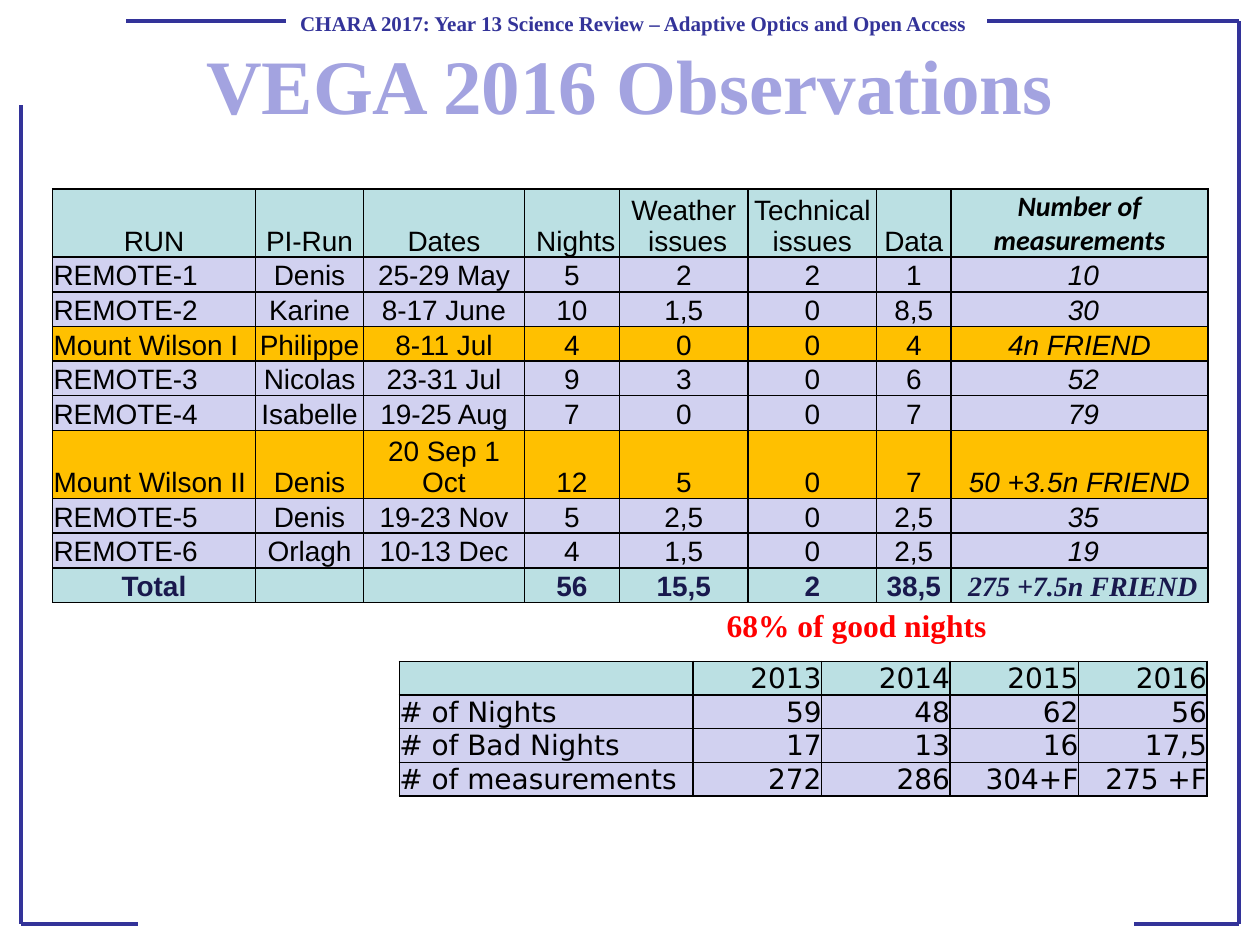
"""Build the VEGA 2016 observations slide with its run table and yearly summary."""
import pptx
import pptx.enum.shapes
import pptx.enum.text
import pptx.oxml.ns
import pptx.util
from lxml import etree
from pptx.dml.color import RGBColor

Cm, Pt = pptx.util.Cm, pptx.util.Pt
qn = pptx.oxml.ns.qn
ALIGN = pptx.enum.text.PP_ALIGN
ANCHOR = pptx.enum.text.MSO_ANCHOR

COLORS = {
    "frame": "333399", "title": "A3A3E0", "alert": "FF0000", "black": "000000",
    "total": "19194D", "head": "BBE0E3", "body": "D1D1F0", "onsite": "FFC000",
}
SERIF, SANS = "Times New Roman", "Arial"

HEADER = "CHARA 2017: Year 13 Science Review – Adaptive Optics and Open Access"
TITLE = "VEGA 2016 Observations"
NOTE = "68% of good nights"

RUNS = [
    ["RUN", "PI-Run", "Dates", " Nights", "Weather\n issues", "Technical issues", "Data",
     "Number of\nmeasurements"],
    ["REMOTE-1", "Denis", "25-29 May", "5", "2", "2", "1", " 10"],
    ["REMOTE-2", "Karine", "8-17 June", "10", "1,5", "0", "8,5", " 30"],
    ["Mount Wilson I", "Philippe", "8-11 Jul", "4", "0", "0", "4", "4n FRIEND"],
    ["REMOTE-3", "Nicolas", "23-31 Jul", "9", "3", "0", "6", " 52"],
    ["REMOTE-4", "Isabelle", "19-25 Aug", "7", "0", "0", "7", " 79"],
    ["Mount Wilson II", "Denis", "20 Sep 1 Oct", "12", "5", "0", "7", "50 +3.5n FRIEND"],
    ["REMOTE-5", "Denis", "19-23 Nov", "5", "2,5", "0", "2,5", " 35"],
    ["REMOTE-6", "Orlagh", "10-13 Dec", "4", "1,5", "0", "2,5", " 19"],
    ["Total", "", "", "56", "15,5", "2", "38,5", " 275 +7.5n FRIEND"],
]
RUN_COLS = [4.09, 2.18, 3.24, 1.92, 2.59, 2.59, 1.5, 5.18]

YEARS = [
    ["", "2013", "2014", "2015", "2016"],
    ["# of Nights", "59", "48", "62", "56"],
    ["# of Bad Nights", "17", "13", "16", "17,5"],
    ["# of measurements", "272", "286", "304+F", "275 +F"],
]
YEAR_COLS = [5.92] + [2.59] * 4

LEFT, RIGHT, TOP, BOTTOM = 0.43, 24.98, 0.43, 18.63
FRAME = [
    (LEFT, 2.12, LEFT, BOTTOM), (LEFT, BOTTOM, 2.79, BOTTOM),
    (2.54, TOP, 5.76, TOP), (19.9, TOP, RIGHT, TOP),
    (RIGHT, TOP, RIGHT, BOTTOM), (22.86, BOTTOM, RIGHT, BOTTOM),
]


def write(tf, text, size=16, font=SANS, color="black", bold=False, italic=False, align=ALIGN.LEFT):
    for i, line in enumerate(text.split("\n")):
        p = tf.add_paragraph() if i else tf.paragraphs[0]
        p.alignment = align
        if not line:
            etree.SubElement(p._p, qn("a:endParaRPr"), sz=str(size * 100))
            continue
        r = p.add_run()
        r.text = line
        r.font.size, r.font.name = Pt(size), font
        r.font.bold, r.font.italic = bold, italic
        r.font.color.rgb = RGBColor.from_string(COLORS[color])


def add_label(s, text, x, y, w, h, **fmt):
    tf = s.shapes.add_textbox(Cm(x), Cm(y), Cm(w), Cm(h)).text_frame
    tf.word_wrap = False
    tf.auto_size = pptx.enum.text.MSO_AUTO_SIZE.SHAPE_TO_FIT_TEXT
    write(tf, text, **fmt)


def add_line(s, x1, y1, x2, y2):
    line = s.shapes.add_connector(pptx.enum.shapes.MSO_CONNECTOR.STRAIGHT, Cm(x1), Cm(y1), Cm(x2), Cm(y2))
    line.line.width = Pt(2.25)
    line.line.color.rgb = RGBColor.from_string(COLORS["frame"])
    etree.SubElement(line._element.spPr, qn("a:effectLst"))


def add_borders(cell):
    tc_pr = cell._tc.get_or_add_tcPr()
    for side in "LRTB":
        ln = etree.SubElement(tc_pr, qn("a:ln" + side), w=str(Pt(1)))
        fill = etree.SubElement(ln, qn("a:solidFill"))
        etree.SubElement(fill, qn("a:srgbClr"), val=COLORS["black"])


def add_grid(s, rows, cols, x, y, row_h, margin, style):
    shape = s.shapes.add_table(len(rows), len(cols), Cm(x), Cm(y), Cm(sum(cols)), Cm(row_h * len(rows)))
    table = shape.table
    table.first_row = table.horz_banding = False
    for col, width in zip(table.columns, cols):
        col.width = Cm(width)
    for i, values in enumerate(rows):
        table.rows[i].height = Cm(row_h)
        for j, text in enumerate(values):
            cell = table.cell(i, j)
            cell.margin_left = cell.margin_right = cell.margin_top = Cm(margin)
            cell.margin_bottom = 0
            cell.vertical_anchor = ANCHOR.BOTTOM
            add_borders(cell)
            fill, fmt = style(i, j, values)
            cell.fill.solid()
            cell.fill.fore_color.rgb = RGBColor.from_string(COLORS[fill])
            write(cell.text_frame, text, **fmt)


def run_style(i, j, values):
    head, total, last = i == 0, i == len(RUNS) - 1, j == len(RUN_COLS) - 1
    onsite = values[0].startswith("Mount")
    fill = "head" if head or total else "onsite" if onsite else "body"
    font = "Calibri" if head and last else SERIF if total and last else SANS
    align = ALIGN.CENTER if j or head or total else ALIGN.LEFT
    return fill, dict(font=font, align=align, italic=last, bold=total or head and last,
                      color="total" if total else "black")


def year_style(i, j, values):
    return "body" if i else "head", dict(font="DejaVu Sans", align=ALIGN.RIGHT if j else ALIGN.LEFT)


def main():
    prs = pptx.Presentation()
    prs.slide_width, prs.slide_height = Cm(25.4), Cm(19.05)
    s = prs.slides.add_slide(prs.slide_layouts[5])

    title = s.shapes.title
    title.left, title.top, title.width, title.height = Cm(0.74), Cm(0.41), Cm(23.92), Cm(2.54)
    title.text_frame.vertical_anchor = ANCHOR.MIDDLE
    write(title.text_frame, TITLE, size=44, font=SERIF, color="title", bold=True, align=ALIGN.CENTER)

    add_label(s, HEADER, 5.8, 0.08, 14.1, 0.76, size=12, font=SERIF, color="frame", bold=True)
    for ends in FRAME:
        add_line(s, *ends)
    add_grid(s, RUNS, RUN_COLS, 1.06, 3.81, 0.64, 0.02, run_style)
    add_grid(s, YEARS, YEAR_COLS, 8.05, 13.33, 0.68, 0, year_style)
    add_label(s, NOTE, 14.4, 12.1, 5.79, 1.02, size=18, font=SERIF, color="alert", bold=True)
    prs.save("out.pptx")


if __name__ == "__main__":
    main()
